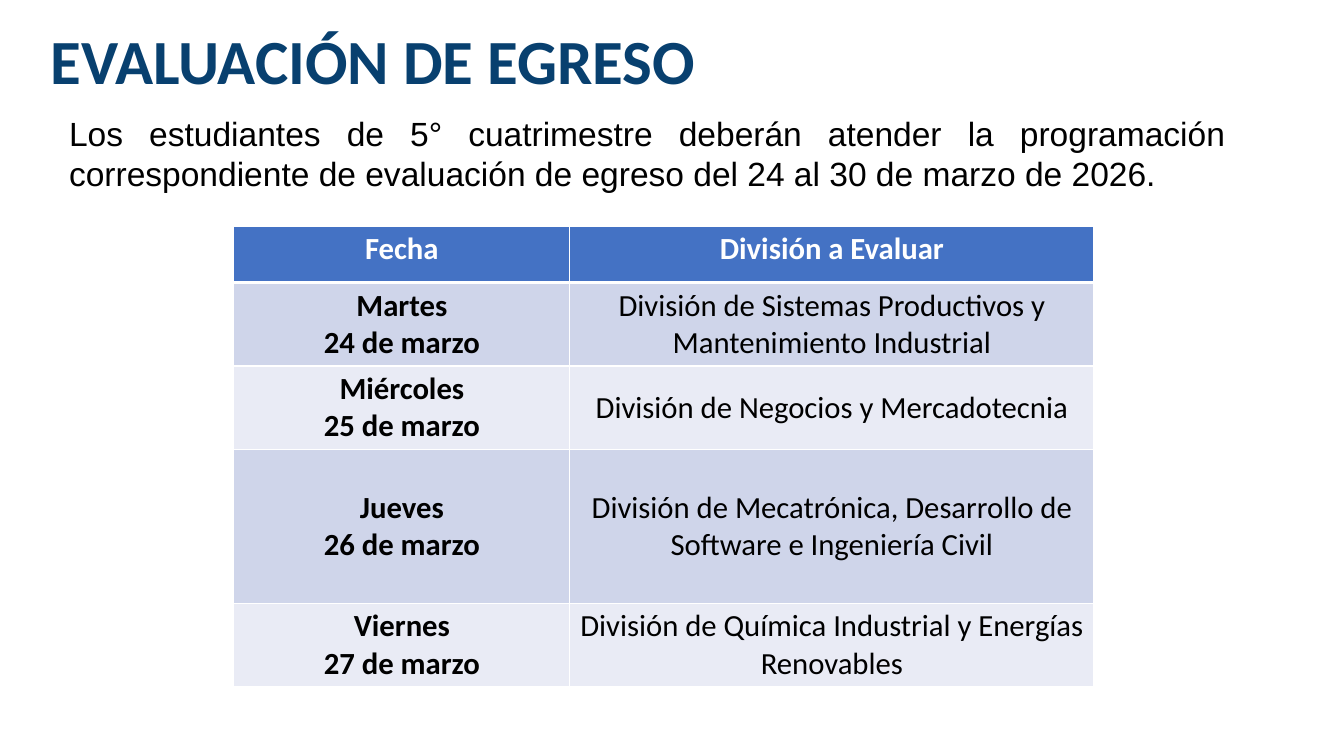
from pptx import Presentation
from pptx.dml.color import RGBColor
from pptx.enum.text import MSO_ANCHOR, PP_ALIGN
from pptx.oxml import parse_xml
from pptx.oxml.ns import nsdecls
from pptx.util import Inches, Pt

WIDTH, HEIGHT = Inches(13.36), Inches(7.5)

THEME = {
    "title": {"name": "Calibri", "size": Pt(45), "bold": True, "color": "08406F"},
    "intro": {"name": "Arial", "size": Pt(24), "bold": False, "color": "000000"},
    "header": {"name": "Calibri", "size": Pt(22), "bold": True, "color": "FFFFFF"},
    "date": {"name": "Calibri", "size": Pt(22), "bold": True, "color": "000000"},
    "division": {"name": "Calibri", "size": Pt(22), "bold": False, "color": "000000"},
    "header_fill": "4472C4",
    "bands": ("CFD5EA", "E9EBF5"),
    "border": "FFFFFF",
}

SCHEDULE = [
    ("Fecha", "División a Evaluar"),
    ("Martes\n24 de marzo",
     "División de Sistemas Productivos y Mantenimiento Industrial"),
    ("Miércoles\n25 de marzo", "División de Negocios y Mercadotecnia"),
    ("Jueves\n26 de marzo",
     "División de Mecatrónica, Desarrollo de Software e Ingeniería Civil"),
    ("Viernes\n27 de marzo",
     "División de Química Industrial y Energías Renovables"),
]
COLUMNS = (3.34, 5.21)
ROWS = (0.56, 0.83, 0.83, 1.53, 0.83)


def set_attributes(target, values):
    for name, value in values.items():
        setattr(target, name, value)


def margins(side, end):
    return {"margin_left": Inches(side), "margin_right": Inches(side),
            "margin_top": Inches(end), "margin_bottom": Inches(end)}


def write_text(tf, text, style, **paragraph_format):
    tf.text = text
    for p in tf.paragraphs:
        set_attributes(p, paragraph_format)
        for r in p.runs:
            for name, value in THEME[style].items():
                if name == "color":
                    r.font.color.rgb = RGBColor.from_string(value)
                else:
                    setattr(r.font, name, value)


def add_text(s, text, style, left, top, width, height, inset, **paragraph_format):
    """Place a text box by shares of the slide's size."""
    sp = s.shapes.add_textbox(int(WIDTH * left), int(HEIGHT * top),
                              int(WIDTH * width), int(HEIGHT * height))
    tf = sp.text_frame
    set_attributes(tf, {"word_wrap": True, **margins(*inset)})
    write_text(tf, text, style, **paragraph_format)


def set_borders(cell, **widths):
    tc_pr = cell._tc.get_or_add_tcPr()
    for side in "LRTB":
        tc_pr.append(parse_xml(
            f'<a:ln{side} {nsdecls("a")} w="{Pt(widths.get(side, 1))}">'
            f'<a:solidFill><a:srgbClr val="{THEME["border"]}"/></a:solidFill>'
            f'</a:ln{side}>'))


def add_schedule(s, left, top):
    table = s.shapes.add_table(
        len(ROWS), len(COLUMNS), int(WIDTH * left), int(HEIGHT * top),
        Inches(sum(COLUMNS)), Inches(sum(ROWS))).table
    for column, width in zip(table.columns, COLUMNS):
        column.width = Inches(width)
    for i, (row, height) in enumerate(zip(table.rows, ROWS)):
        row.height = Inches(height)
        is_header = i == 0
        fill = THEME["header_fill"] if is_header else THEME["bands"][(i - 1) % 2]
        anchor = MSO_ANCHOR.TOP if is_header else MSO_ANCHOR.MIDDLE
        # The thick rule under the header is shared with the first date row
        rules = {0: {"B": 3}, 1: {"T": 3}}.get(i, {})
        for cell, text, style in zip(row.cells, SCHEDULE[i], ("date", "division")):
            set_borders(cell, **rules)
            cell.fill.solid()
            cell.fill.fore_color.rgb = RGBColor.from_string(fill)
            set_attributes(cell, {"vertical_anchor": anchor, **margins(0.08, 0.04)})
            write_text(cell.text_frame, text, "header" if is_header else style,
                       alignment=PP_ALIGN.CENTER)


def main():
    prs = Presentation()
    set_attributes(prs, {"slide_width": WIDTH, "slide_height": HEIGHT})
    s = prs.slides.add_slide(prs.slide_layouts[6])

    # Heading
    add_text(s, "EVALUACIÓN DE EGRESO", "title", 0.034, 0.015, 0.5, 0.119,
             (0.05, 0.03), line_spacing=1.1)

    # Instructions
    add_text(s, "Los estudiantes de 5° cuatrimestre deberán atender la programación "
             "correspondiente de evaluación de egreso del 24 al 30 de marzo de 2026.",
             "intro", 0.044, 0.143, 0.875, 0.121, (0.1, 0.05),
             alignment=PP_ALIGN.JUSTIFY)

    # Dates and divisions
    add_schedule(s, 0.174, 0.3)

    prs.save("out.pptx")


if __name__ == "__main__":
    main()
